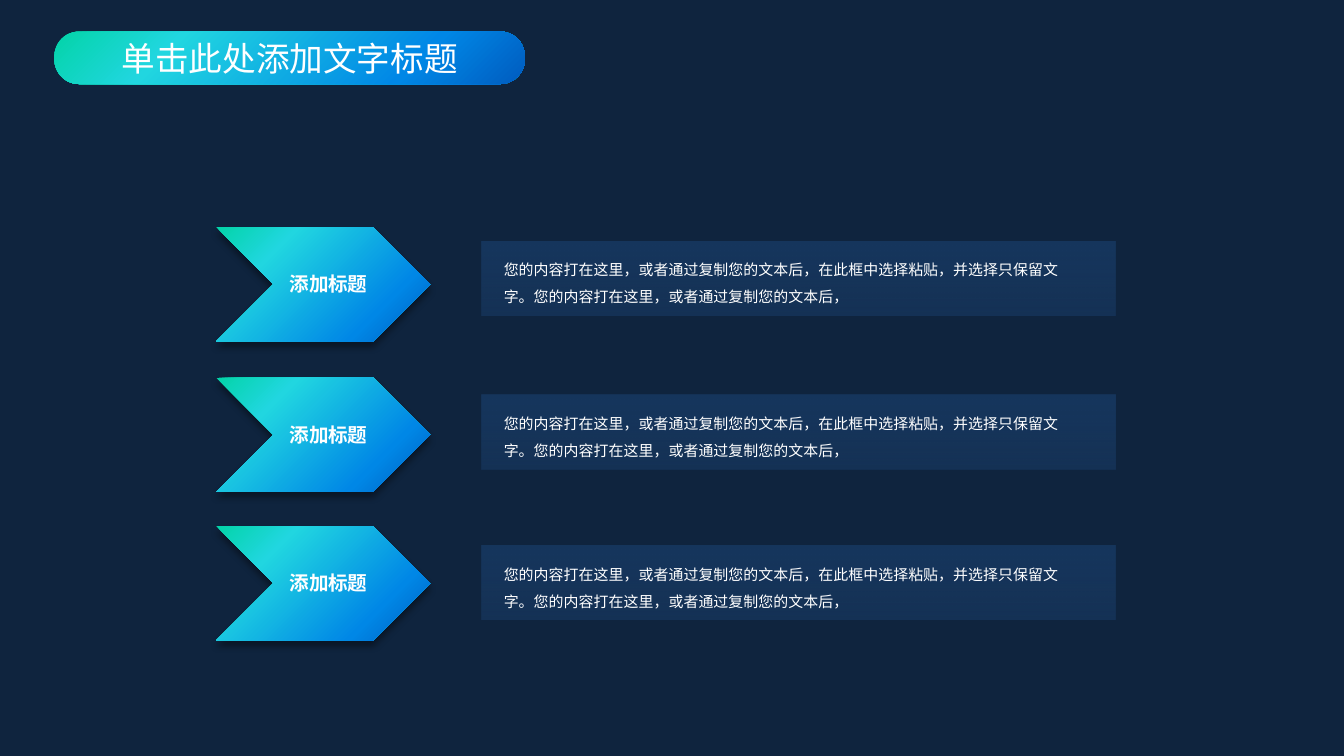
import pptx
import pptx.util
from lxml import etree
from pptx.dml.color import RGBColor
from pptx.enum.shapes import MSO_SHAPE
from pptx.enum.text import MSO_ANCHOR, MSO_AUTO_SIZE, PP_ALIGN
from pptx.oxml import parse_xml
from pptx.oxml.ns import nsdecls, qn

FONT = "Noto Sans CJK SC"
BRIGHT = [(0, "03D4A8", 100), (25, "21D6E0", 100), (75, "0087E6", 100), (100, "005CBF", 100)]
PANEL = [(3, "17375E", 100), (100, "183860", 68)]
LABEL = "添加标题"
BODY = "您的内容打在这里，或者通过复制您的文本后，在此框中选择粘贴，并选择只保留文字。您的内容打在这里，或者通过复制您的文本后，"


def paint_gradient(shape, stops, angle):
    """Fill with (percent, colour, opacity) stops; the angle runs clockwise."""
    shape.shadow.inherit = False
    shape.line.fill.background()
    shape.fill.gradient()
    shape.fill.gradient_angle = 360 - angle
    stop_list = shape._element.spPr.find(".//" + qn("a:gsLst"))
    stop_list.clear()
    for percent, colour, opacity in stops:
        stop = etree.SubElement(stop_list, qn("a:gs"), pos=str(percent * 1000))
        paint = etree.SubElement(stop, qn("a:srgbClr"), val=colour)
        if opacity < 100:
            etree.SubElement(paint, qn("a:alpha"), val=str(opacity * 1000))


def write(box, text, size, bold=False, align=PP_ALIGN.LEFT, spacing=None):
    box.text_frame.text = text
    para = box.text_frame.paragraphs[0]
    para.alignment = align
    para.line_spacing = spacing
    para.font.size = pptx.util.Pt(size)
    para.font.bold = bold
    para.font.color.rgb = RGBColor.from_string("FFFFFF")
    para.font.name = FONT
    etree.SubElement(para.font._element, qn("a:ea"), typeface=FONT)


deck = pptx.Presentation()
deck.slide_width = pptx.util.Inches(10)
deck.slide_height = deck.slide_width * 9 // 16
cell = deck.slide_width // 100  # square grid, 100 columns across the slide

page = deck.slides.add_slide(deck.slide_layouts[5])
page.background.fill.solid()
page.background.fill.fore_color.rgb = RGBColor.from_string("0F243E")

# Title on its gradient pill
title_area = [round(n * cell) for n in (4.05, 2.35, 35, 3.9)]
pill = page.shapes.add_shape(MSO_SHAPE.ROUNDED_RECTANGLE, *title_area)
pill.adjustments[0] = 0.47
paint_gradient(pill, BRIGHT, 45)

title = page.shapes.title
title.left, title.top, title.width, title.height = title_area
page.shapes._spTree.append(title._element)  # in front of the pill
write(title, "单击此处添加文字标题", 18, align=PP_ALIGN.CENTER)
title.text_frame.auto_size = MSO_AUTO_SIZE.NONE
title.text_frame.vertical_anchor = MSO_ANCHOR.MIDDLE
title.text_frame.margin_top = title.text_frame.margin_bottom = 0

# Arrows with their labels
for arrow_row, label_row in ((16.9, 19.75), (28.1, 31), (39.15, 42)):
    group = page.shapes.add_group_shape()
    arrow = group.shapes.add_shape(
        MSO_SHAPE.CHEVRON, *[round(n * cell) for n in (16.1, arrow_row, 15.9, 8.5)])
    paint_gradient(arrow, BRIGHT, 45)
    effects = arrow._element.spPr.find(qn("a:effectLst"))
    effects.append(parse_xml(
        f'<a:outerShdw {nsdecls("a")} blurRad="{pptx.util.Pt(4)}" dist="{pptx.util.Pt(3)}" '
        'dir="5400000" algn="t" rotWithShape="0">'
        '<a:srgbClr val="000000"><a:alpha val="40000"/></a:srgbClr></a:outerShdw>'))

    label = group.shapes.add_textbox(*[round(n * cell) for n in (20.5, label_row, 7.9, 2.8)])
    label.text_frame.word_wrap = False
    label.text_frame.auto_size = MSO_AUTO_SIZE.SHAPE_TO_FIT_TEXT
    write(label, LABEL, 10.5, bold=True, align=PP_ALIGN.CENTER)

# Panels with their descriptions
group = page.shapes.add_group_shape()
for panel_row, text_row in ((18, 18.25), (29.4, 29.7), (40.6, 40.95)):
    panel = group.shapes.add_shape(
        MSO_SHAPE.RECTANGLE, *[round(n * cell) for n in (35.8, panel_row, 47.2, 5.5)])
    paint_gradient(panel, PANEL, 90)

    body = group.shapes.add_textbox(*[round(n * cell) for n in (36.5, text_row, 44.2, 4.8)])
    body.text_frame.word_wrap = True
    body.text_frame.auto_size = MSO_AUTO_SIZE.SHAPE_TO_FIT_TEXT
    write(body, BODY, 8, spacing=1.5)

deck.save("out.pptx")
